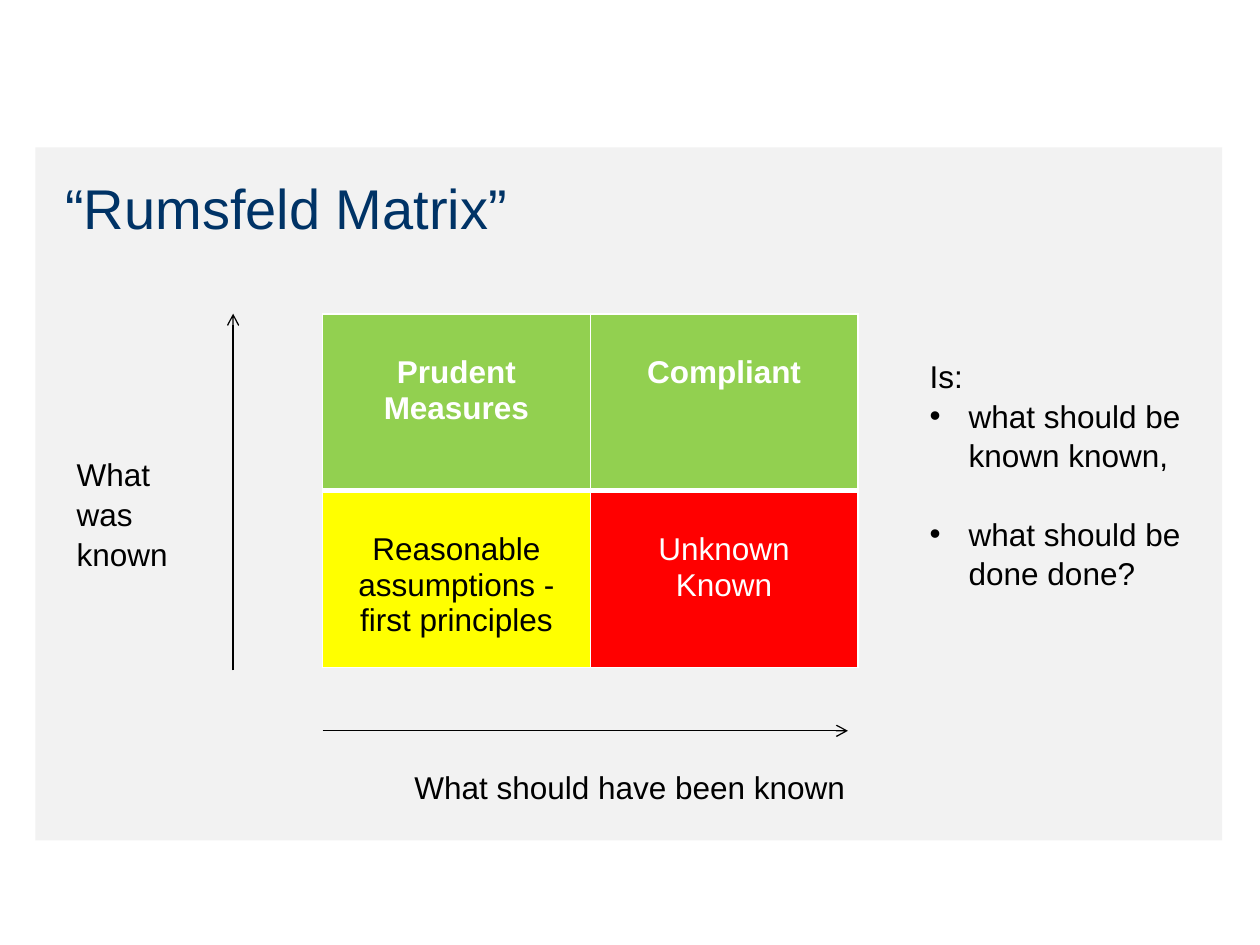
from dataclasses import dataclass

from lxml.etree import SubElement
from pptx import Presentation
from pptx.dml.color import RGBColor
from pptx.enum.shapes import MSO_CONNECTOR, MSO_SHAPE
from pptx.enum.text import MSO_ANCHOR, PP_ALIGN
from pptx.oxml.ns import qn
from pptx.util import Inches, Pt


@dataclass(frozen=True)
class Theme:
    """Colours and type sizes of the slide."""
    panel: str = "F2F2F2"
    navy: str = "003366"
    black: str = "000000"
    white: str = "FFFFFF"
    green: str = "92D050"
    yellow: str = "FFFF00"
    red: str = "FF0000"
    font: str = "Arial"
    title_size: int = 32
    body_size: int = 18
    line_spacing: float = 1.05


THEME = Theme()


def color(value):
    """Turn a hex string into a colour."""
    return RGBColor.from_string(value)


def add_run(paragraph, words, ink=THEME.black, size=THEME.body_size, bold=False):
    """Add one styled run to a paragraph."""
    run = paragraph.add_run()
    run.text = words
    run.font.name = THEME.font
    run.font.size = Pt(size)
    run.font.bold = bold
    run.font.color.rgb = color(ink)


def add_frame(slide, box, wrap=True):
    """Add a text box and return its text frame."""
    frame = slide.shapes.add_textbox(*map(Inches, box)).text_frame
    frame.word_wrap = wrap
    frame.vertical_anchor = MSO_ANCHOR.TOP
    return frame


def add_panel(slide, box):
    """Place the grey panel behind the content."""
    panel = slide.shapes.add_shape(MSO_SHAPE.RECTANGLE, *map(Inches, box))
    panel.shadow.inherit = False
    panel.fill.solid()
    panel.fill.fore_color.rgb = color(THEME.panel)
    panel.line.fill.background()


def add_title(slide, box, words):
    """Place the slide title."""
    paragraph = add_frame(slide, box).paragraphs[0]
    add_run(paragraph, words, THEME.navy, THEME.title_size)


def add_label(slide, box, words, wrap=True):
    """Place the label of an axis."""
    paragraph = add_frame(slide, box, wrap).paragraphs[0]
    paragraph.line_spacing = THEME.line_spacing
    add_run(paragraph, words)


def add_axis(slide, start, end):
    """Draw an axis arrow from start to end."""
    axis = slide.shapes.add_connector(
        MSO_CONNECTOR.STRAIGHT, *map(Inches, (*start, *end)))
    axis.line.color.rgb = color(THEME.black)
    axis.line.width = Pt(0.75)
    properties = axis.line._get_or_add_ln()
    SubElement(properties, qn("a:tailEnd"), type="arrow")
    SubElement(properties.getparent(), qn("a:effectLst"))


def set_borders(cell, widths):
    """Give a cell white borders, with a width in points for each side."""
    for side, width in widths.items():
        border = SubElement(
            cell._tc.get_or_add_tcPr(), qn(f"a:ln{side}"), w=str(Pt(width)))
        fill = SubElement(border, qn("a:solidFill"))
        SubElement(fill, qn("a:srgbClr"), val=THEME.white)


def add_matrix(slide, box, quadrants):
    """Place the two by two matrix of quadrants."""
    rows, columns = len(quadrants), len(quadrants[0])
    matrix = slide.shapes.add_table(rows, columns, *map(Inches, box)).table
    for row, row_quadrants in enumerate(quadrants):
        for column, (lines, fill, ink) in enumerate(row_quadrants):
            cell = matrix.cell(row, column)
            is_top = row == 0
            set_borders(cell, {"L": 1, "R": 1, "T": 1 if is_top else 3,
                               "B": 3 if is_top else 1})
            cell.fill.solid()
            cell.fill.fore_color.rgb = color(fill)
            cell.margin_top = Inches(0.33)
            frame = cell.text_frame
            for index, words in enumerate(lines):
                paragraph = frame.add_paragraph() if index else frame.paragraphs[0]
                paragraph.alignment = PP_ALIGN.CENTER
                add_run(paragraph, words, ink, bold=is_top)


def add_questions(slide, box, lead, questions):
    """Place the lead-in and its bulleted questions."""
    frame = add_frame(slide, box)
    opening = frame.paragraphs[0]
    opening.line_spacing = THEME.line_spacing
    add_run(opening, lead)
    indent = Inches(0.31)
    for index, question in enumerate(questions):
        paragraph = frame.add_paragraph()
        paragraph.line_spacing = THEME.line_spacing
        paragraph.space_before = Pt(22 if index else 0)
        properties = paragraph._p.get_or_add_pPr()
        properties.set("marL", str(indent))
        properties.set("indent", str(-indent))
        SubElement(properties, qn("a:buFont"), typeface=THEME.font)
        SubElement(properties, qn("a:buChar"), char="•")
        add_run(paragraph, question)


def main():
    """Build the slide and save it."""
    deck = Presentation()
    deck.slide_width, deck.slide_height = Inches(10), Inches(7.5)
    slide = deck.slides.add_slide(deck.slide_layouts[6])
    quadrants = [
        [(["Prudent Measures"], THEME.green, THEME.white),
         (["Compliant"], THEME.green, THEME.white)],
        [(["Reasonable assumptions -", "first principles"], THEME.yellow, THEME.black),
         (["Unknown", "Known"], THEME.red, THEME.white)],
    ]
    add_panel(slide, (0.28, 1.17, 9.42, 5.5))
    add_title(slide, (0.42, 1.33, 8.5, 1.25), "“Rumsfeld Matrix”")
    add_matrix(slide, (2.56, 2.49, 4.25, 2.81), quadrants)
    add_axis(slide, (1.85, 5.32), (1.85, 2.49))
    add_axis(slide, (2.56, 5.8), (6.73, 5.8))
    add_label(slide, (3.19, 6.03, 3.65, 0.4), "What should have been known", wrap=False)
    add_label(slide, (0.51, 3.55, 1.1, 1.01), "What was known")
    add_questions(slide, (7.28, 2.77, 2.2, 1.92), "Is:",
                  ["what should be known known,", "what should be done done?"])
    deck.save("out.pptx")


if __name__ == "__main__":
    main()
